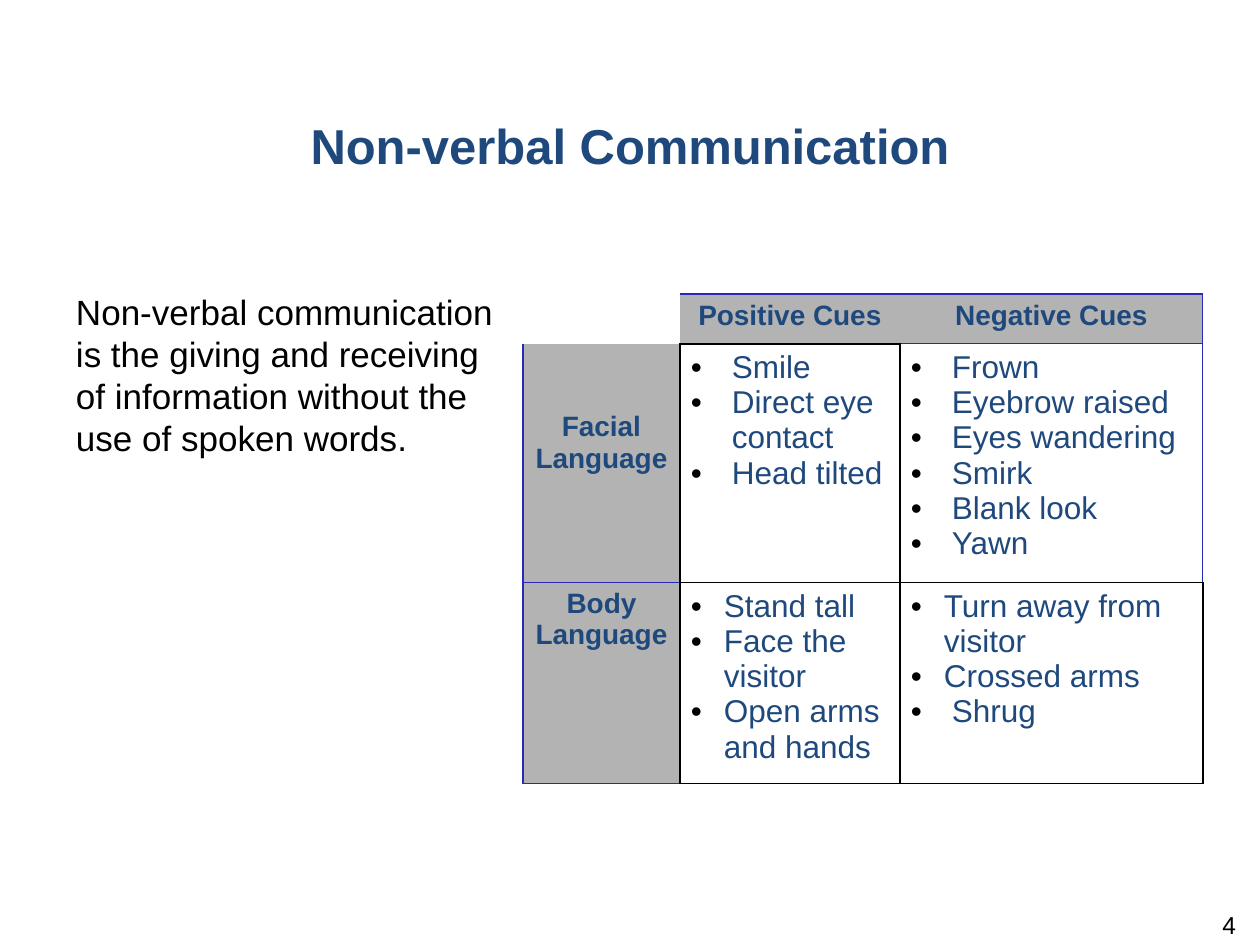
from dataclasses import dataclass, field

from lxml.etree import SubElement
from pptx import Presentation
from pptx.dml.color import RGBColor
from pptx.enum.text import MSO_ANCHOR as Anchor, PP_ALIGN as Align
from pptx.oxml.ns import qn
from pptx.util import Emu, Pt

DPI = 126
COLORS = {"navy": "1F497D", "black": "000000", "blue": "2929B8", "gray": "B3B3B3"}
LINE_WIDTHS = {"black": 1, "blue": 0.75}
NO_STYLE = "{2D5ABB26-0587-4C30-8999-92F81FD0307C}"
COLS = (157, 220, 303)
ROWS = (48, 225, 189)
GRID = dict.fromkeys("LRTB", "black")


@dataclass
class Cell:
    lines: list[str] = field(default_factory=list)
    borders: dict[str, str] = field(default_factory=dict)
    heading: bool = False
    indents: list[int] = field(default_factory=list)
    top: int = 6


TABLE = [
    [
        Cell(),
        Cell(["Positive Cues"], {"T": "blue", "B": "black"}, True),
        Cell(["Negative Cues"], {"R": "blue", "T": "blue", "B": "blue"}, True),
    ],
    [
        Cell(["Facial Language"], {"L": "blue", "R": "black", "B": "blue"}, True, top=68),
        Cell(["Smile", "Direct eye contact", "Head tilted"], GRID, indents=[41] * 3),
        Cell(
            ["Frown", "Eyebrow raised", "Eyes wandering", "Smirk", "Blank look", "Yawn"],
            {"L": "black", "R": "blue", "T": "blue", "B": "black"},
            indents=[41] * 6,
        ),
    ],
    [
        Cell(["Body Language"], {"L": "blue", "R": "black", "T": "blue", "B": "blue"}, True),
        Cell(["Stand tall", "Face the visitor", "Open arms and hands"], GRID, indents=[33] * 3),
        Cell(["Turn away from visitor", "Crossed arms", "Shrug"], GRID, indents=[33, 33, 41]),
    ],
]


def px(n: int) -> Emu:
    return Emu(round(n * 914400 / DPI))


def place(sp, left: int, top: int, width: int, height: int) -> None:
    sp.left, sp.top, sp.width, sp.height = map(px, (left, top, width, height))


def add_run(p, text: str, size: int, color: str, bold: bool = False) -> None:
    r = p.add_run()
    r.text = text
    r.font.name = "Arial"
    r.font.size = Pt(size)
    r.font.bold = bold
    r.font.color.rgb = RGBColor.from_string(COLORS[color])


def write_box(sp, text: str, size: int, color: str, align: Align,
              bold: bool = False, top: int = 6) -> None:
    tf = sp.text_frame
    tf.word_wrap = True
    tf.vertical_anchor = Anchor.TOP
    tf.margin_left = tf.margin_right = px(13)
    tf.margin_top, tf.margin_bottom = px(top), px(6)
    p = tf.paragraphs[0]
    pPr = p._p.get_or_add_pPr()
    pPr.set("marL", "0")
    pPr.set("indent", "0")
    SubElement(pPr, qn("a:buNone"))
    p.alignment = align
    p.line_spacing = Pt(size * 1.2)
    p.space_before = Pt(0)
    p.space_after = Pt(6)
    add_run(p, text, size, color, bold)


def add_bullet(p, indent: int) -> None:
    pPr = p._p.get_or_add_pPr()
    pPr.set("marL", str(px(indent)))
    pPr.set("indent", str(-px(indent)))
    clr = SubElement(pPr, qn("a:buClr"))
    SubElement(clr, qn("a:srgbClr"), val=COLORS["black"])
    SubElement(pPr, qn("a:buFont"), typeface="Arial")
    SubElement(pPr, qn("a:buChar"), char="•")


def draw_borders(cell, borders: dict[str, str]) -> None:
    tcPr = cell._tc.get_or_add_tcPr()
    for side in "LRTB":
        color = borders.get(side)
        ln = SubElement(tcPr, qn(f"a:ln{side}"))
        if color:
            ln.set("w", str(Pt(LINE_WIDTHS[color])))
            fill = SubElement(ln, qn("a:solidFill"))
            SubElement(fill, qn("a:srgbClr"), val=COLORS[color])
        else:
            SubElement(ln, qn("a:noFill"))


def fill_cell(cell, item: Cell) -> None:
    cell.margin_left = cell.margin_right = px(11)
    cell.margin_top, cell.margin_bottom = px(item.top), px(6)
    draw_borders(cell, item.borders)
    if item.heading:
        cell.fill.solid()
        cell.fill.fore_color.rgb = RGBColor.from_string(COLORS["gray"])
    else:
        cell.fill.background()
    tf = cell.text_frame
    for i, line in enumerate(item.lines):
        p = tf.add_paragraph() if i else tf.paragraphs[0]
        if item.heading:
            p.alignment = Align.CENTER
        else:
            add_bullet(p, item.indents[i])
        add_run(p, line, 16 if item.heading else 18, "navy", item.heading)


def add_cues_table(s, left: int, top: int) -> None:
    table = s.shapes.add_table(
        len(ROWS), len(COLS), px(left), px(top), px(sum(COLS)), px(sum(ROWS))
    ).table
    table.first_row = table.horz_banding = False
    table._tbl.tblPr.find(qn("a:tableStyleId")).text = NO_STYLE
    for col, width in zip(table.columns, COLS):
        col.width = px(width)
    for row, height, items in zip(table.rows, ROWS, TABLE):
        row.height = px(height)
        for cell, item in zip(row.cells, items):
            fill_cell(cell, item)


def main() -> None:
    prs = Presentation()
    prs.slide_width, prs.slide_height = px(1260), px(945)
    s = prs.slides.add_slide(prs.slide_layouts[1])

    title, body = s.placeholders
    place(title, 0, 110, 1260, 150)
    write_box(title, "Non-verbal Communication", 28, "navy", Align.CENTER, bold=True)
    place(body, 63, 284, 459, 539)
    write_box(
        body,
        "Non-verbal communication is the giving and receiving of information "
        "without the use of spoken words.",
        20, "black", Align.LEFT,
    )

    number = s.shapes.add_textbox(px(955), px(910), px(294), px(50))
    place(number, 955, 910, 294, 50)
    write_box(number, "4", 14, "black", Align.RIGHT, top=0)

    add_cues_table(s, 523, 294)
    prs.save("out.pptx")


if __name__ == "__main__":
    main()
